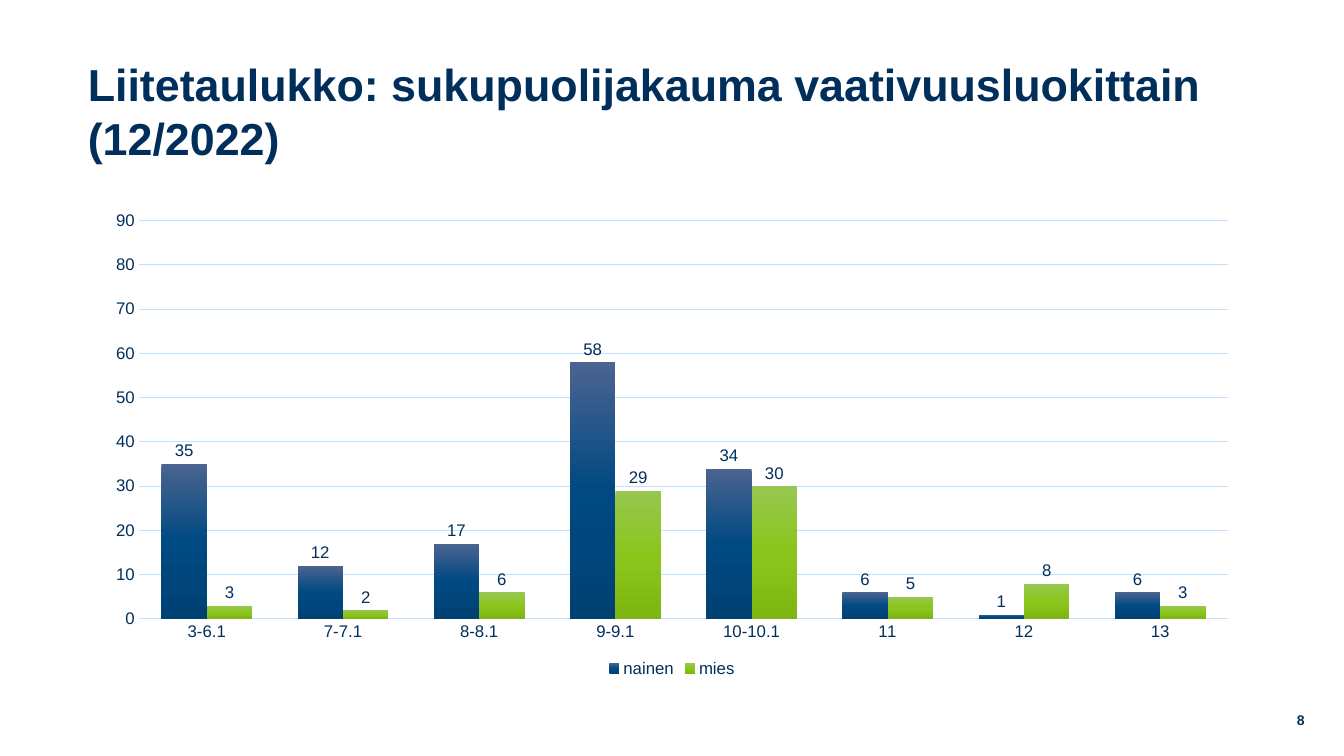
from copy import deepcopy
from dataclasses import dataclass

from pptx import Presentation, oxml, util as u
from pptx.chart import data as chart_data
from pptx.dml.color import RGBColor
from pptx.enum import chart as ch, text
from pptx.oxml.ns import nsdecls

PX = 9525  # EMU per px, 96 px to the inch
COLORS = {"ink": "002F5B", "grid": "C0E1FF", "paper": "FFFFFF"}
FONT = "Arial"
CATEGORIES = ["3-6.1", "7-7.1", "8-8.1", "9-9.1", "10-10.1", "11", "12", "13"]


@dataclass
class Box:
    left: int
    top: int
    width: int
    height: int

    def emu(self) -> list:
        return [u.Emu(v * PX) for v in (self.left, self.top, self.width, self.height)]


@dataclass
class Gender:
    name: str
    counts: list
    gradient: list  # colours at the top, middle and bottom of a bar


GENDERS = [
    Gender("nainen", [35, 12, 17, 58, 34, 6, 1, 6], ["4B6490", "004982", "004174"]),
    Gender("mies", [3, 2, 6, 29, 30, 5, 8, 3], ["97C750", "8BC51C", "7EB612"]),
]


def rgb(name: str) -> RGBColor:
    return RGBColor.from_string(COLORS[name])


def style_font(font, size: int, bold: bool = False) -> None:
    for key, value in {"name": FONT, "size": u.Pt(size), "bold": bold}.items():
        setattr(font, key, value)
    font.color.rgb = rgb("ink")


def write(shape, box: Box, words: str, size: int, align) -> None:
    shape.left, shape.top, shape.width, shape.height = box.emu()
    frame = shape.text_frame
    frame.text = words
    frame_format = {
        "word_wrap": True,
        "auto_size": text.MSO_AUTO_SIZE.NONE,
        "vertical_anchor": text.MSO_ANCHOR.MIDDLE,
    }
    for key, value in frame_format.items():
        setattr(frame, key, value)
    paragraph = frame.paragraphs[0]
    paragraph.alignment = align
    style_font(paragraph.runs[0].font, size, bold=True)


def style_line(line) -> None:
    line.color.rgb = rgb("grid")
    line.width = u.Pt(0.75)


def style_series(series, gender: Gender) -> None:
    fill = series.format.fill
    fill.gradient()
    fill.gradient_angle = 270
    stop_list = series._element.xpath(".//a:gsLst")[0]
    stop_list.insert(1, deepcopy(stop_list[0]))
    for stop, position, color in zip(fill.gradient_stops, (0, 0.5, 1), gender.gradient):
        stop.position = position
        stop.color.rgb = RGBColor.from_string(color)
    series.invert_if_negative = False
    labels = series.data_labels
    labels.show_value = True
    labels.position = ch.XL_LABEL_POSITION.OUTSIDE_END
    style_font(labels.font, 12)


def place_plot(chart, **shares: float) -> None:
    plot_area = chart._chartSpace.chart.plotArea
    for old in plot_area.xpath("./c:layout"):
        plot_area.remove(old)
    sizes = "".join(f'<c:{key} val="{value}"/>' for key, value in shares.items())
    plot_area.insert(0, oxml.parse_xml(
        f'<c:layout {nsdecls("c")}><c:manualLayout><c:layoutTarget val="inner"/>'
        f'<c:xMode val="edge"/><c:yMode val="edge"/>{sizes}</c:manualLayout></c:layout>'))


def add_gender_chart(slide, box: Box) -> None:
    numbers = chart_data.CategoryChartData()
    numbers.categories = CATEGORIES
    for gender in GENDERS:
        numbers.add_series(gender.name, gender.counts)
    chart = slide.shapes.add_chart(
        ch.XL_CHART_TYPE.COLUMN_CLUSTERED, *box.emu(), numbers).chart
    style_font(chart.font, 12)
    chart.has_title = False
    place_plot(chart, x=0.04, y=0.04, w=0.94, h=0.83)

    # Columns
    plot = chart.plots[0]
    for key, value in {"gap_width": 100, "overlap": 0, "vary_by_categories": False}.items():
        setattr(plot, key, value)
    for series, gender in zip(plot.series, GENDERS):
        style_series(series, gender)

    # Axes
    levels, counts = chart.category_axis, chart.value_axis
    for axis in (levels, counts):
        axis.major_tick_mark = axis.minor_tick_mark = ch.XL_TICK_MARK.NONE
        style_font(axis.tick_labels.font, 12)
    style_line(levels.format.line)
    for key, value in {"minimum_scale": 0, "maximum_scale": 90, "major_unit": 10}.items():
        setattr(counts, key, value)
    counts.format.line.fill.background()
    style_line(counts.major_gridlines.format.line)

    # Legend
    chart.has_legend = True
    chart.legend.position = ch.XL_LEGEND_POSITION.BOTTOM
    chart.legend.include_in_layout = False
    style_font(chart.legend.font, 12)


def main() -> None:
    deck = Presentation()
    deck.slide_width, deck.slide_height = 1280 * PX, 720 * PX
    slide = deck.slides.add_slide(deck.slide_layouts[5])
    slide.background.fill.solid()
    slide.background.fill.fore_color.rgb = rgb("paper")

    # Title
    write(slide.shapes.title, Box(74, 36, 1141, 139),
          "Liitetaulukko: sukupuolijakauma vaativuusluokittain (12/2022)",
          32, text.PP_ALIGN.LEFT)

    # Page number
    page_box = Box(964, 667, 288, 38)
    write(slide.shapes.add_textbox(*page_box.emu()), page_box, "8", 10, text.PP_ALIGN.RIGHT)

    # Chart
    add_gender_chart(slide, Box(88, 192, 1104, 457))
    deck.save("out.pptx")


if __name__ == "__main__":
    main()
